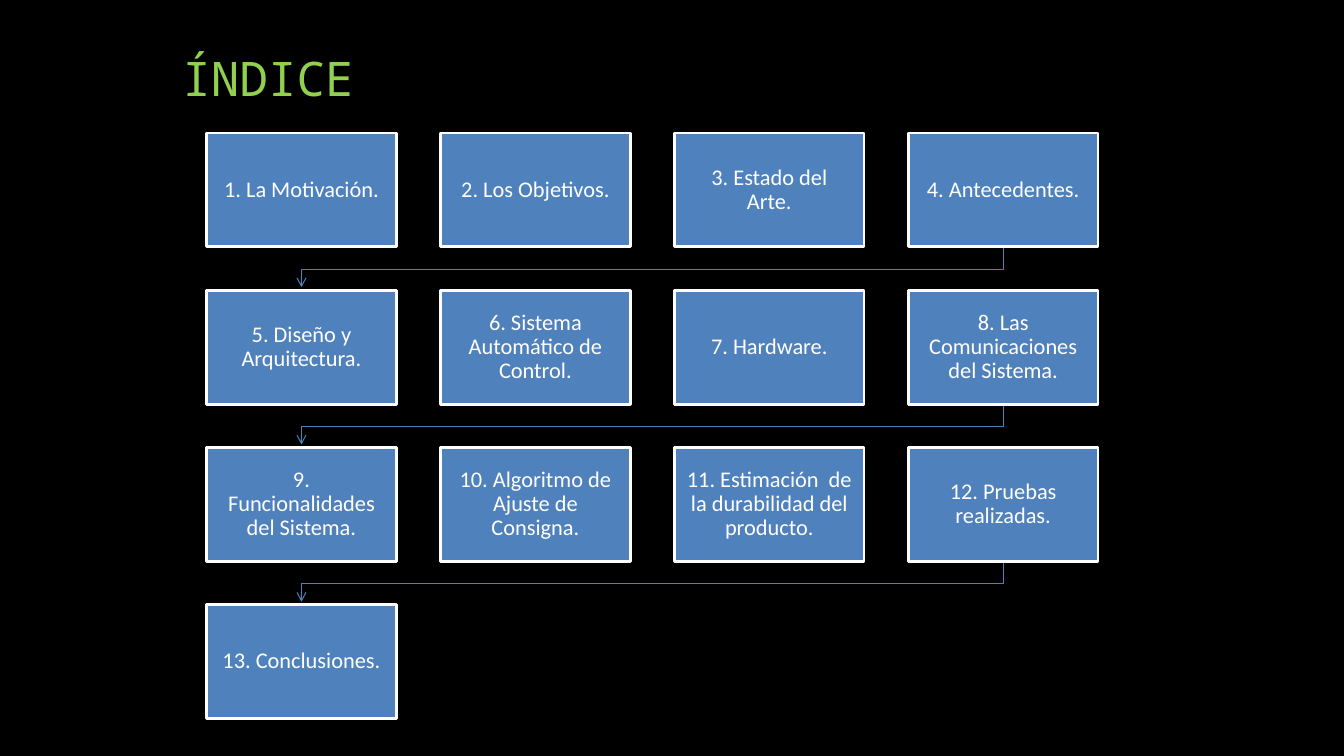
from dataclasses import dataclass

import lxml.etree
import pptx
import pptx.dml.color
import pptx.enum.shapes
import pptx.enum.text
import pptx.oxml.ns
import pptx.slide
import pptx.util

Inches = pptx.util.Inches
Pt = pptx.util.Pt

COLORS = {"background": "000000", "title": "92D050", "box": "4F81BD", "text": "FFFFFF"}
COLUMNS = 4
GRID_LEFT, GRID_TOP = 2.05, 1.32
COLUMN_STEP, ROW_STEP = 2.32, 1.56
BOX_WIDTH, BOX_HEIGHT = 1.88, 1.13
TURN_DROP, ARROW_DROP = 0.22, 0.4
TOPICS = [
    "La Motivación.",
    "Los Objetivos.",
    "Estado del Arte.",
    "Antecedentes.",
    "Diseño y Arquitectura.",
    "Sistema Automático de Control.",
    "Hardware.",
    "Las Comunicaciones del Sistema.",
    "Funcionalidades del Sistema.",
    "Algoritmo de Ajuste de Consigna.",
    "Estimación  de la durabilidad del producto.",
    "Pruebas realizadas.",
    "Conclusiones.",
]


@dataclass(frozen=True)
class Step:
    number: int
    topic: str

    @property
    def left(self) -> float:
        return GRID_LEFT + (self.number - 1) % COLUMNS * COLUMN_STEP

    @property
    def top(self) -> float:
        return GRID_TOP + (self.number - 1) // COLUMNS * ROW_STEP

    @property
    def center(self) -> float:
        return self.left + BOX_WIDTH / 2

    @property
    def bottom(self) -> float:
        return self.top + BOX_HEIGHT


def color(name: str) -> pptx.dml.color.RGBColor:
    return pptx.dml.color.RGBColor.from_string(COLORS[name])


def format_font(font, name: str, size: int, color_name: str) -> None:
    font.name = name
    font.size = Pt(size)
    font.color.rgb = color(color_name)


def add_title(slide: pptx.slide.Slide, text: str) -> None:
    title = slide.shapes.title
    title.left, title.top = Inches(1.71), Inches(0.29)
    title.width, title.height = Inches(10), Inches(0.81)
    title.text_frame.text = text
    title.text_frame.vertical_anchor = pptx.enum.text.MSO_ANCHOR.BOTTOM
    paragraph = title.text_frame.paragraphs[0]
    paragraph.alignment = pptx.enum.text.PP_ALIGN.LEFT
    format_font(paragraph.runs[0].font, "Noto Sans Mono", 34, "title")


def add_row_arrow(slide: pptx.slide.Slide, last: Step, following: Step) -> None:
    """Lead from the end of one row to the start of the next."""
    turn = last.bottom + TURN_DROP
    builder = slide.shapes.build_freeform(
        Inches(last.center), Inches(last.bottom), scale=1.0
    )
    corners = [
        (last.center, turn),
        (following.center, turn),
        (following.center, last.bottom + ARROW_DROP),
    ]
    builder.add_line_segments([(Inches(x), Inches(y)) for x, y in corners], close=False)
    arrow = builder.convert_to_shape()
    arrow.shadow.inherit = False
    arrow.fill.background()
    arrow.line.color.rgb = color("box")
    arrow.line.width = Pt(0.75)
    line = arrow.line.fill._xPr
    lxml.etree.SubElement(line, pptx.oxml.ns.qn("a:tailEnd"), type="arrow")


def add_box(slide: pptx.slide.Slide, step: Step) -> None:
    box = slide.shapes.add_shape(
        pptx.enum.shapes.MSO_SHAPE.RECTANGLE,
        Inches(step.left), Inches(step.top), Inches(BOX_WIDTH), Inches(BOX_HEIGHT),
    )
    box.shadow.inherit = False
    box.fill.solid()
    box.fill.fore_color.rgb = color("box")
    box.line.color.rgb = color("text")
    box.line.width = Pt(2)
    frame = box.text_frame
    frame.text = f"{step.number}. {step.topic}"
    frame.word_wrap = True
    frame.vertical_anchor = pptx.enum.text.MSO_ANCHOR.MIDDLE
    frame.margin_left = frame.margin_right = Inches(0.12)
    frame.margin_top = frame.margin_bottom = Inches(0.12)
    paragraph = frame.paragraphs[0]
    paragraph.alignment = pptx.enum.text.PP_ALIGN.CENTER
    paragraph.line_spacing = 0.9
    format_font(paragraph.runs[0].font, "Calibri", 16, "text")


def main() -> None:
    presentation = pptx.Presentation()
    presentation.slide_width = Inches(13.33)
    presentation.slide_height = Inches(7.5)
    title_only = presentation.slide_layouts.get_by_name("Title Only")
    slide = presentation.slides.add_slide(title_only)
    slide.background.fill.solid()
    slide.background.fill.fore_color.rgb = color("background")

    add_title(slide, "ÍNDICE")
    steps = [Step(number, topic) for number, topic in enumerate(TOPICS, start=1)]
    for start in range(COLUMNS, len(steps), COLUMNS):
        add_row_arrow(slide, steps[start - 1], steps[start])
    for step in steps:
        add_box(slide, step)
    presentation.save("out.pptx")


if __name__ == "__main__":
    main()
